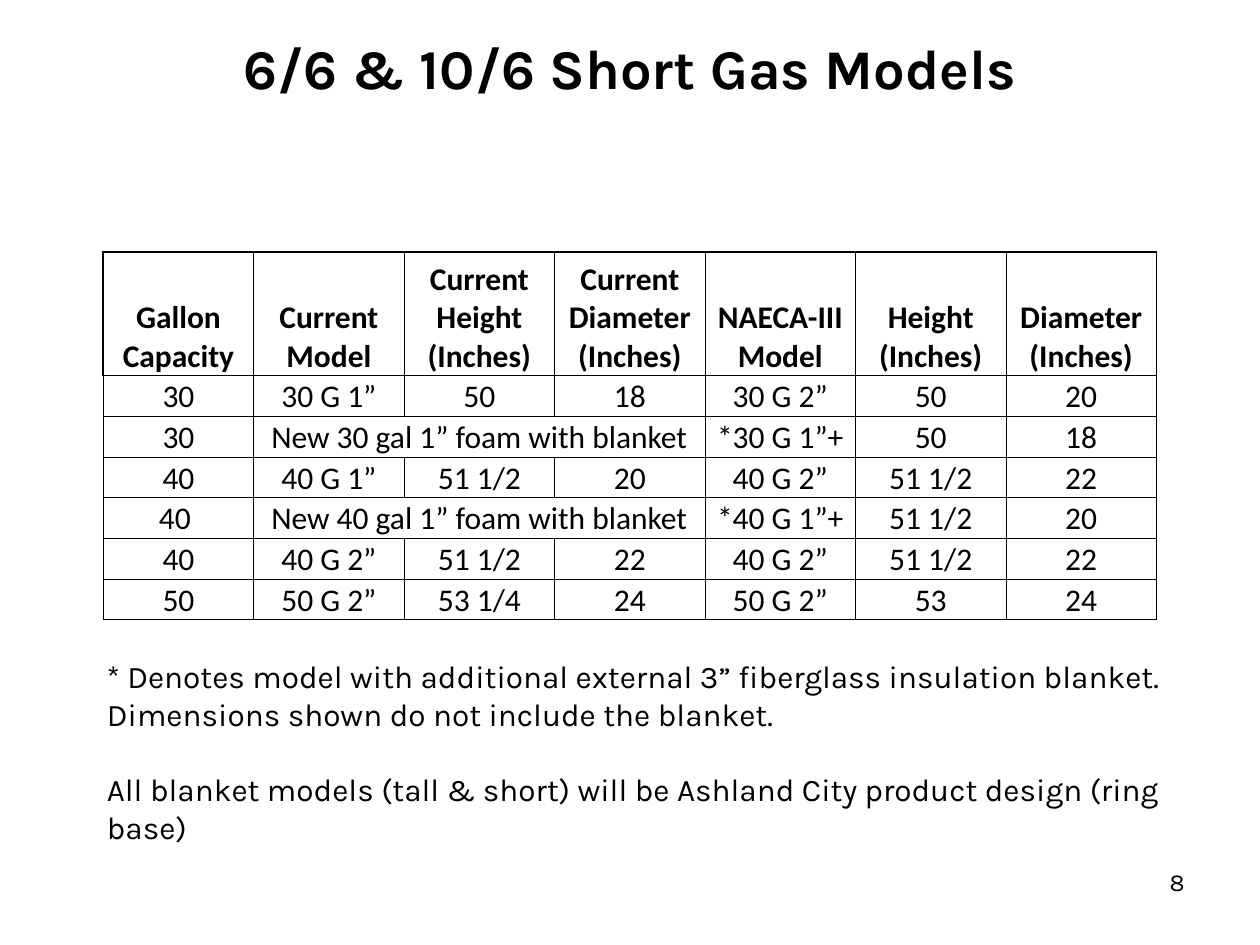
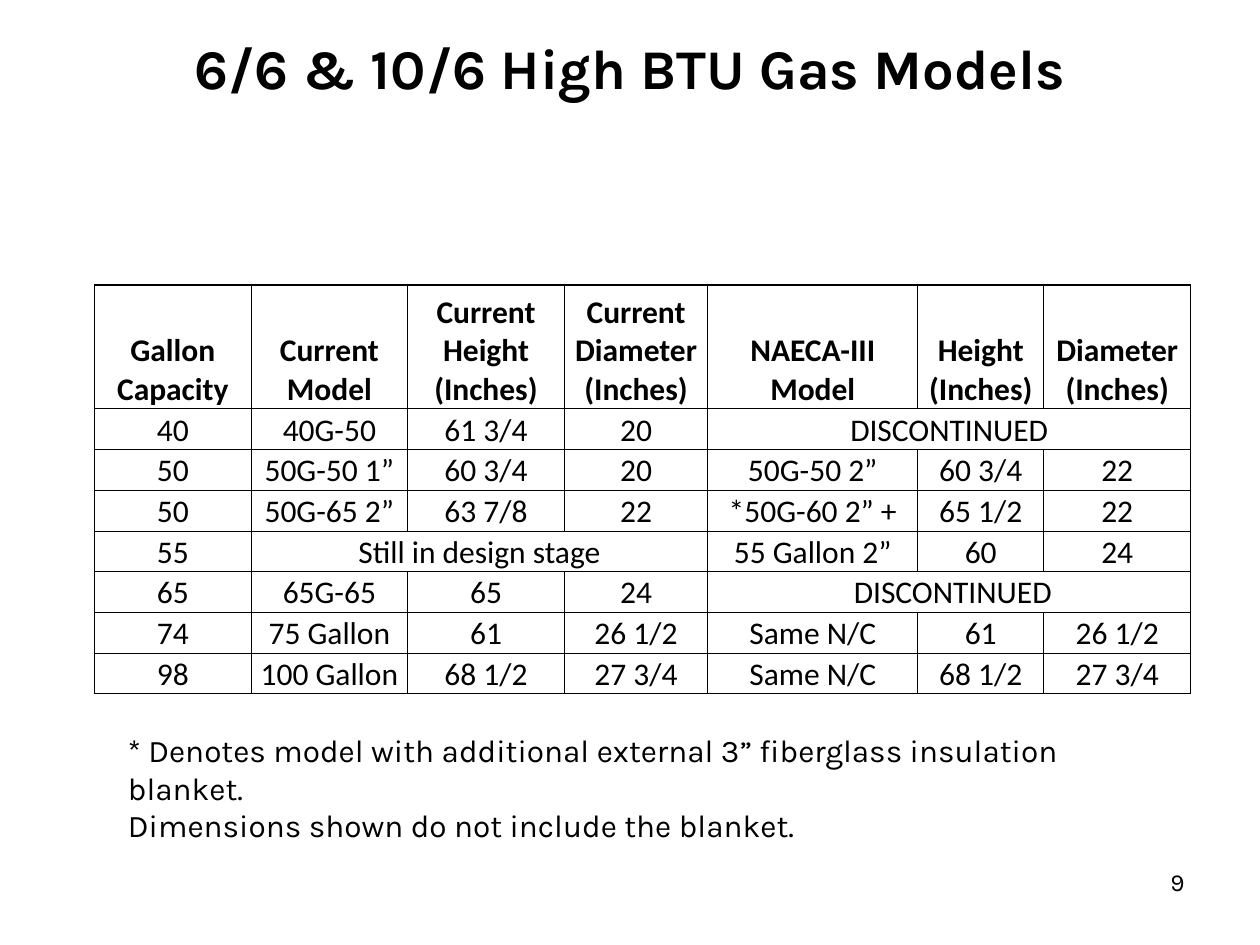
import pptx
import pptx.dml.color
import pptx.enum.text
import pptx.oxml
import pptx.oxml.ns
import pptx.util

Pt = pptx.util.Pt
PP_ALIGN = pptx.enum.text.PP_ALIGN
MSO_ANCHOR = pptx.enum.text.MSO_ANCHOR
BLACK = pptx.dml.color.RGBColor(0x00, 0x00, 0x00)
WHITE = pptx.dml.color.RGBColor(0xFF, 0xFF, 0xFF)

TITLE_FORMAT = {"name": "Karla", "size": Pt(32), "bold": True}
NUMBER_FORMAT = {"name": "Karla", "size": Pt(14)}
NOTE_FORMAT = {"name": "Karla", "size": Pt(18)}
HEADER_FORMAT = {"name": "Calibri", "size": Pt(18), "bold": True}
BODY_FORMAT = {"name": "Calibri", "size": Pt(18), "bold": False}
CELL_LAYOUT = {
    "margin_left": Pt(0.7), "margin_right": Pt(0.7),
    "margin_top": Pt(0.7), "margin_bottom": 0,
    "vertical_anchor": MSO_ANCHOR.BOTTOM,
}
HEADER_HEIGHT = 70.6
ROW_HEIGHT = 23.3

HEADERS = [
    "Gallon Capacity", "Current Model", "Current Height (Inches)",
    "Current Diameter (Inches)", "NAECA-III Model", "Height (Inches)",
    "Diameter (Inches)",
]
BLANKET_NOTES = [
    "* Denotes model with additional external 3” fiberglass insulation blanket.",
    "Dimensions shown do not include the blanket.",
]

MODEL_SLIDES = [
    {
        "title": "6/6 & 10/6 Short Gas Models",
        "number": "8",
        "table_position": (59, 144),
        "column_widths": [86] * 7,
        "header_bottom": 1,
        "rows": [
            ["30", "30 G 1”", "50", "18", "30 G 2”", "50", "20"],
            ["30", "New 30 gal 1” foam with blanket", None, None, "*30 G 1”+", "50", "18"],
            ["40", "40 G 1”", "51 1/2", "20", "40 G 2”", "51 1/2", "22"],
            ["40 ", "New 40 gal 1” foam with blanket", None, None, "*40 G 1”+", "51 1/2", "20"],
            ["40", "40 G 2”", "51 1/2", "22", "40 G 2”", "51 1/2", "22"],
            ["50", "50 G 2”", "53 1/4", "24", "50 G 2”", "53", "24"],
        ],
        "note_box": (54, 372, 643, 94.5),
        "notes": BLANKET_NOTES,
        "closing_note": "All blanket models (tall & short) will be Ashland City product design (ring base)",
    },
    {
        "title": "6/6 & 10/6 High BTU Gas Models",
        "number": "9",
        "table_position": (54, 163),
        "column_widths": [89.5, 89.5, 89.5, 82, 120, 72, 84],
        "header_bottom": 0.5,
        "rows": [
            ["40", "40G-50", "61 3/4", "20", "DISCONTINUED", None, None],
            ["50", "50G-50 1”", "60 3/4", "20", "50G-50 2”", "60 3/4", "22"],
            ["50", "50G-65 2”", "63 7/8", "22", "*50G-60 2” +", "65 1/2", "22"],
            ["55", "Still in design stage", None, None, "55 Gallon 2”", "60", "24"],
            ["65", "65G-65", "65", "24", " DISCONTINUED", None, None],
            ["74", "75 Gallon", "61", "26 1/2", "Same N/C", "61", "26 1/2"],
            ["98", "100 Gallon", "68 1/2", "27 3/4", "Same N/C", "68 1/2", "27 3/4"],
        ],
        "note_box": (66, 414, 593.5, 51),
        "notes": BLANKET_NOTES,
        "closing_note": None,
    },
]


def format_paragraph(paragraph, text, font_format, alignment):
    paragraph.text = text
    paragraph.alignment = alignment
    font = paragraph.runs[0].font
    for attribute, value in font_format.items():
        setattr(font, attribute, value)
    font.color.rgb = BLACK


def set_borders(cell, widths):
    properties = cell._tc.get_or_add_tcPr()
    for side, width in widths.items():
        properties.append(pptx.oxml.parse_xml(
            f'<a:ln{side} {pptx.oxml.ns.nsdecls("a")} w="{int(Pt(width))}">'
            f'<a:solidFill><a:srgbClr val="{BLACK}"/></a:solidFill></a:ln{side}>'))


presentation = pptx.Presentation()
presentation.slide_width = Pt(720)
presentation.slide_height = Pt(540)
title_only_layout = presentation.slide_layouts[5]

for model_slide in MODEL_SLIDES:
    slide = presentation.slides.add_slide(title_only_layout)
    slide.background.fill.solid()
    slide.background.fill.fore_color.rgb = WHITE

    title = slide.shapes.title
    title.left, title.top, title.width, title.height = Pt(36), Pt(16), Pt(648), Pt(44.5)
    title.text_frame.vertical_anchor = MSO_ANCHOR.MIDDLE
    format_paragraph(title.text_frame.paragraphs[0], model_slide["title"],
                     TITLE_FORMAT, PP_ALIGN.CENTER)

    number_box = slide.shapes.add_textbox(Pt(516), Pt(492), Pt(168), Pt(37.5))
    number_box.text_frame.word_wrap = True
    format_paragraph(number_box.text_frame.paragraphs[0], model_slide["number"],
                     NUMBER_FORMAT, PP_ALIGN.RIGHT)

    note_box = slide.shapes.add_textbox(*map(Pt, model_slide["note_box"]))
    note_frame = note_box.text_frame
    note_frame.word_wrap = True
    note_frame.auto_size = pptx.enum.text.MSO_AUTO_SIZE.SHAPE_TO_FIT_TEXT
    for index, note in enumerate(model_slide["notes"]):
        paragraph = note_frame.add_paragraph() if index else note_frame.paragraphs[0]
        format_paragraph(paragraph, note, NOTE_FORMAT, PP_ALIGN.LEFT)
    if model_slide["closing_note"]:
        paragraph = note_frame.add_paragraph()
        format_paragraph(paragraph, model_slide["closing_note"], NOTE_FORMAT, PP_ALIGN.LEFT)
        paragraph.space_before = Pt(21.5)

    rows = [HEADERS] + model_slide["rows"]
    column_widths = model_slide["column_widths"]
    row_heights = [HEADER_HEIGHT] + [ROW_HEIGHT] * len(model_slide["rows"])
    left, top = model_slide["table_position"]
    table = slide.shapes.add_table(
        len(rows), len(HEADERS), Pt(left), Pt(top),
        Pt(sum(column_widths)), Pt(sum(row_heights))).table
    table.first_row = False
    table.horz_banding = False
    for column, width in zip(table.columns, column_widths):
        column.width = Pt(width)
    for row, height in zip(table.rows, row_heights):
        row.height = Pt(height)

    last_column = len(HEADERS) - 1
    for row_index, row in enumerate(rows):
        is_header = row_index == 0
        for column_index, text in enumerate(row):
            cell = table.cell(row_index, column_index)
            for attribute, value in CELL_LAYOUT.items():
                setattr(cell, attribute, value)
            header_bottom = model_slide["header_bottom"]
            set_borders(cell, {
                "L": 1 if is_header and column_index == 0 else 0.5,
                "R": 1 if is_header and column_index == last_column else 0.5,
                "T": 1 if is_header else header_bottom if row_index == 1 else 0.5,
                "B": header_bottom if is_header else 0.5,
            })
            cell.fill.solid()
            cell.fill.fore_color.rgb = WHITE
            if text is not None:
                format_paragraph(cell.text_frame.paragraphs[0], text,
                                 HEADER_FORMAT if is_header else BODY_FORMAT, PP_ALIGN.CENTER)
        if None in row:
            first_empty = row.index(None)
            table.cell(row_index, first_empty - 1).merge(
                table.cell(row_index, first_empty + row.count(None) - 1))

presentation.save("out.pptx")
